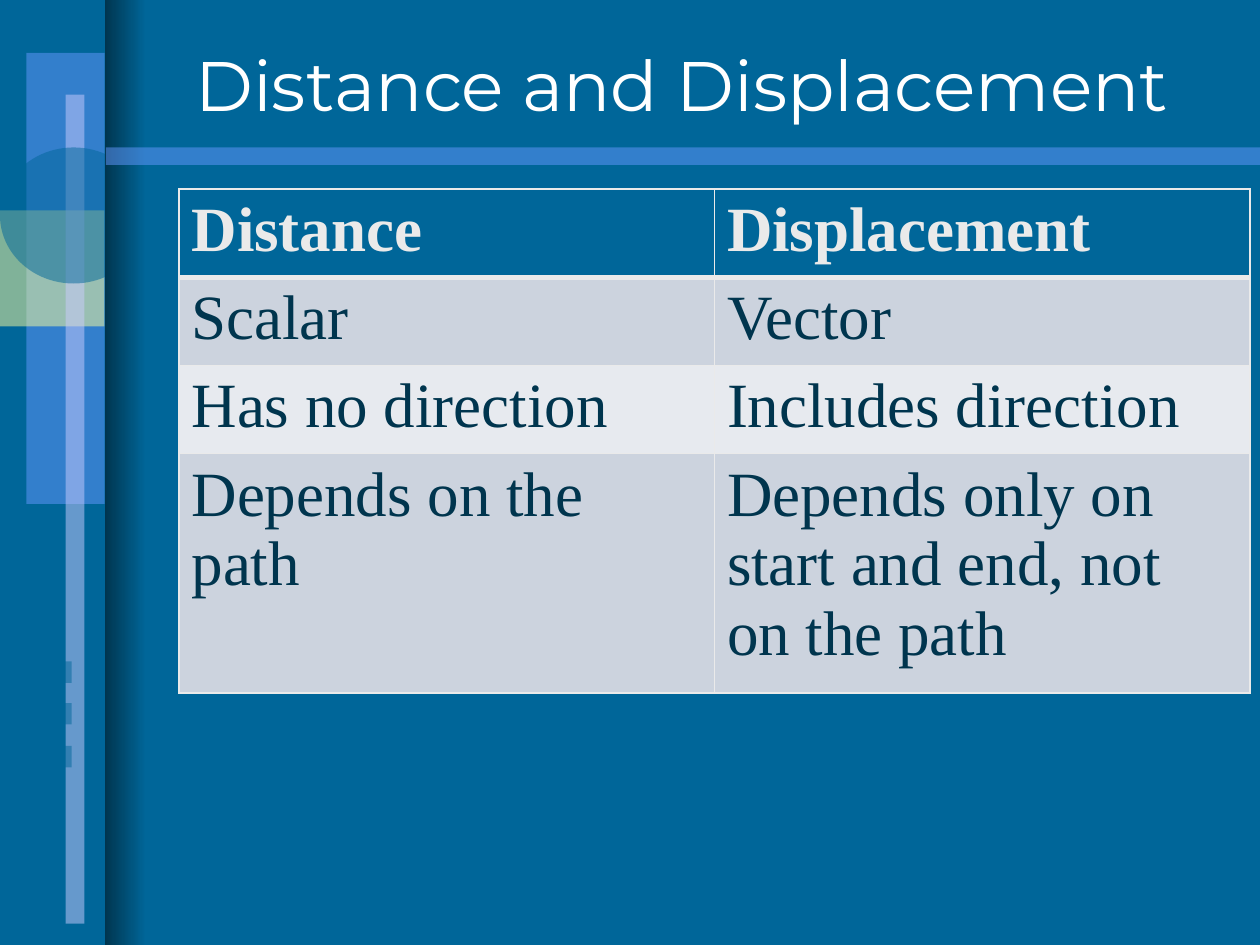
import math
from typing import NamedTuple

import pptx
import pptx.dml.color
import pptx.enum.shapes
import pptx.enum.text
import pptx.oxml
import pptx.oxml.ns
import pptx.util
from pptx.util import Inches

RECT = pptx.enum.shapes.MSO_SHAPE.RECTANGLE
OVAL = pptx.enum.shapes.MSO_SHAPE.OVAL
BLUE, NAVY, PALE = "006699", "00354E", "EAEAEA"
SKY, YELLOW, LILAC = "6699FF", "FFFF99", "CCCCFF"


class Panel(NamedTuple):
    left: float
    top: float
    width: float
    height: float
    color: str
    kind: int = RECT


def rgb(color: str) -> pptx.dml.color.RGBColor:
    return pptx.dml.color.RGBColor.from_string(color)


def paint_half_clear(shape, color: str) -> None:
    """Fill a shape at 50 % opacity, without outline or shadow."""
    shape.shadow.inherit = False
    shape.line.fill.background()
    shape.fill.solid()
    shape.fill.fore_color.rgb = rgb(color)
    srgb = shape.fill._xPr.find(".//" + pptx.oxml.ns.qn("a:srgbClr"))
    srgb.append(pptx.oxml.parse_xml(
        f'<a:alpha {pptx.oxml.ns.nsdecls("a")} val="50000"/>'))


def draw_panel(page, panel: Panel) -> None:
    shape = page.shapes.add_shape(
        panel.kind, Inches(panel.left), Inches(panel.top),
        Inches(panel.width), Inches(panel.height))
    paint_half_clear(shape, panel.color)


def draw_half_disc(page, left: float, middle: float, width: float,
                   radius: float, color: str, steps: int = 24) -> None:
    angles = [math.pi * (i / steps - 0.5) for i in range(steps + 1)]
    points = [(left + width * math.cos(a), middle + radius * math.sin(a))
              for a in angles]
    builder = page.shapes.build_freeform(*points[0], scale=Inches(1))
    builder.add_line_segments(points[1:], close=True)
    paint_half_clear(builder.convert_to_shape(), color)


def set_border(cell, side: str, points: float) -> None:
    cell._tc.get_or_add_tcPr().append(pptx.oxml.parse_xml(
        f'<a:ln{side} {pptx.oxml.ns.nsdecls("a")} w="{pptx.util.Pt(points)}">'
        f'<a:solidFill><a:srgbClr val="{PALE}"/></a:solidFill></a:ln{side}>'))


def style_text(paragraph, font: str, size: float, color: str,
               bold: bool = False) -> None:
    paragraph.font.name = font
    paragraph.font.size = pptx.util.Pt(size)
    paragraph.font.color.rgb = rgb(color)
    paragraph.font.bold = bold


deck = pptx.Presentation()
deck.slide_width, deck.slide_height = Inches(10), Inches(7.5)
page = deck.slides.add_slide(deck.slide_layouts[6])
page.background.fill.solid()
page.background.fill.fore_color.rgb = rgb(BLUE)

# Side decoration
side_panels = [
    Panel(0.21, 0.42, 0.62, 3.58, SKY),
    Panel(0, 1.67, 0.83, 0.92, YELLOW),
    Panel(0.52, 0.75, 0.15, 6.58, LILAC),
    *(Panel(0, top, 0.57, 0.17, BLUE) for top in (5.25, 5.58, 5.92)),
]
for panel in side_panels:
    draw_panel(page, panel)
draw_half_disc(page, 0.82, 4.92, 0.22, 1, YELLOW)
draw_panel(page, Panel(0, 1.17, 1.17, 1.08, BLUE, OVAL))

# Shaded fold
fold = page.shapes.add_shape(RECT, Inches(0.83), 0, Inches(0.33), Inches(7.5))
fold.shadow.inherit = False
fold.line.fill.background()
fold.fill.gradient()
fold.fill.gradient_angle = 0
for stop, color in zip(fold.fill.gradient_stops, (NAVY, BLUE)):
    stop.color.rgb = rgb(color)

# Title and rule
draw_panel(page, Panel(0.84, 1.17, 9.16, 0.14, SKY))
title = page.shapes.add_textbox(
    Inches(1.07), Inches(0.25), Inches(8.68), Inches(0.83))
title.text_frame.word_wrap = True
title.text_frame.vertical_anchor = pptx.enum.text.MSO_ANCHOR.MIDDLE
heading = title.text_frame.paragraphs[0]
heading.text = "Distance and Displacement"
heading.alignment = pptx.enum.text.PP_ALIGN.CENTER
style_text(heading, "Montserrat", 40, "FFFFFF")

# Comparison table
ROWS = [
    ("Distance", "Displacement"),
    ("Scalar", "Vector"),
    ("Has no direction", "Includes direction"),
    ("Depends on the path", "Depends only on start and end, not on the path"),
]
HEIGHTS = (0.65, 0.65, 0.65, 1.76)
FILLS = (BLUE, "CCD3DE", "E7EAEF", "CCD3DE")
table = page.shapes.add_table(
    len(ROWS), 2, Inches(1.42), Inches(1.5),
    Inches(8.5), Inches(sum(HEIGHTS))).table
table.first_row = table.horz_banding = False
for r, (texts, height, fill) in enumerate(zip(ROWS, HEIGHTS, FILLS)):
    table.rows[r].height = Inches(height)
    for c, text in enumerate(texts):
        cell = table.cell(r, c)
        for side in "LRTB":
            header_rule = (r, side) in ((0, "B"), (1, "T"))
            set_border(cell, side, 3 if header_rule else 1)
        cell.fill.solid()
        cell.fill.fore_color.rgb = rgb(fill)
        para = cell.text_frame.paragraphs[0]
        para.text = text
        style_text(para, "Times New Roman", 36,
                   PALE if r == 0 else NAVY, bold=r == 0)

deck.save("out.pptx")
